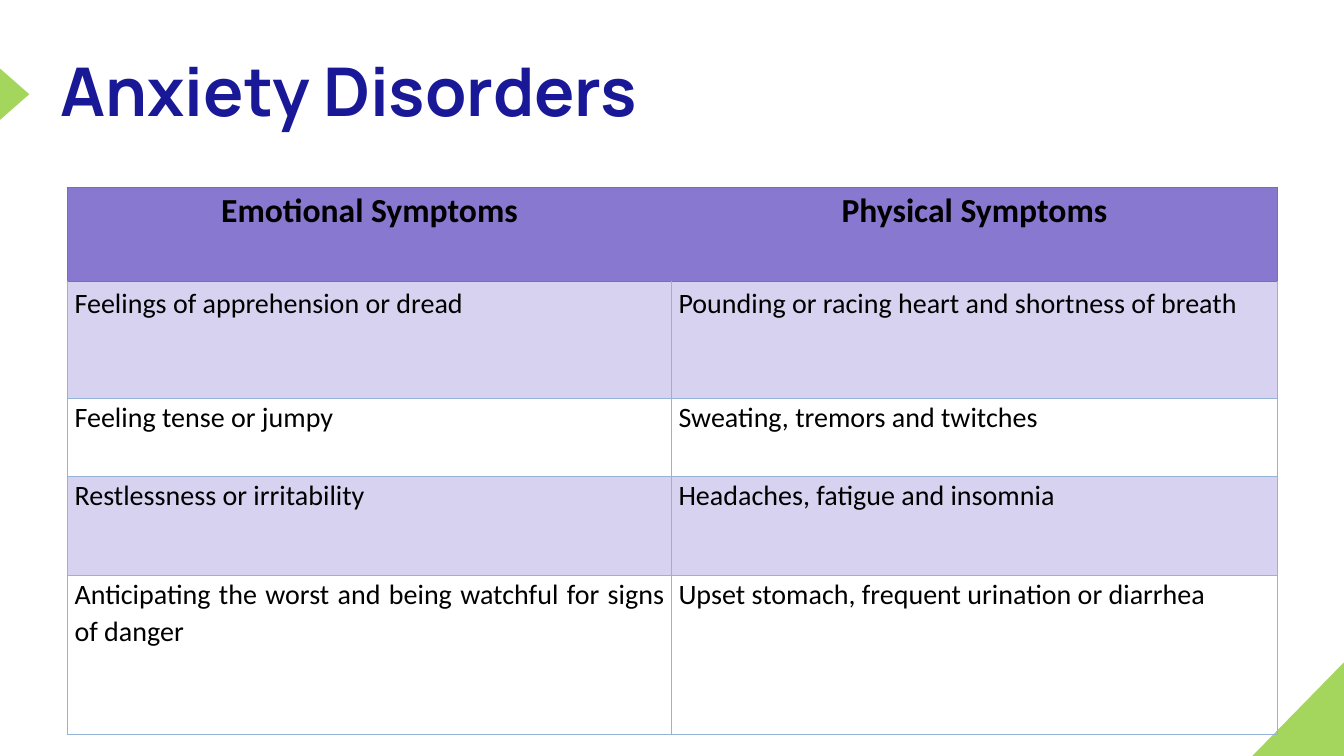
from dataclasses import dataclass
from pptx import Presentation
from pptx.dml.color import RGBColor as Rgb
from pptx.enum.shapes import MSO_SHAPE as Kind
from pptx.enum.text import MSO_ANCHOR as Anchor, PP_ALIGN as Align, MSO_AUTO_SIZE as Fit
from pptx.oxml import parse_xml
from pptx.oxml.ns import nsdecls
from pptx.util import Inches, Pt


@dataclass(frozen=True)
class Theme:
    green: str = "A4D65E"
    navy: str = "191998"
    black: str = "000000"
    head: str = "8878CF"
    band: str = "D7D2EF"
    edge: str = "95B3D7"
    rule: str = "4F81BD"
    title: int = 48
    label: int = 24
    body: int = 20


@dataclass(frozen=True)
class Mark:
    kind: Kind
    left: float
    top: float
    width: float
    height: float
    turn: int


@dataclass(frozen=True)
class Row:
    height: float
    texts: tuple[str, str]
    align: Align = Align.JUSTIFY
    space: float = 1.07


LOOK = Theme()
MARKS = (
    Mark(Kind.RIGHT_TRIANGLE, 12.41, 6.57, 0.94, 0.92, 270),
    Mark(Kind.ISOSCELES_TRIANGLE, -0.11, 0.79, 0.51, 0.29, 90),
)
WIDTHS = (5.99, 6.01)
ROWS = (
    Row(0.93, ("Emotional Symptoms", "Physical Symptoms"), Align.CENTER),
    Row(1.16, ("Feelings of apprehension or dread",
               "Pounding or racing heart and shortness of breath"), Align.LEFT, 1.15),
    Row(0.78, ("Feeling tense or jumpy", "Sweating, tremors and twitches")),
    Row(0.98, ("Restlessness or irritability", "Headaches, fatigue and insomnia")),
    Row(1.58, ("Anticipating the worst and being watchful for signs of danger",
               "Upset stomach, frequent urination or diarrhea")),
)


def apply(item, values: dict) -> None:
    for name, value in values.items():
        setattr(item, name, value)


def style(para, face: str, size: int, color: str, bold: bool) -> None:
    for run in para.runs:
        apply(run.font, {"name": face, "size": Pt(size), "bold": bold})
        run.font.color.rgb = Rgb.from_string(color)


def draw_mark(slide, mark: Mark) -> None:
    box = map(Inches, (mark.left, mark.top, mark.width, mark.height))
    shape = slide.shapes.add_shape(mark.kind, *box)
    shape.rotation = mark.turn
    shape.shadow.inherit = False
    shape.fill.solid()
    shape.fill.fore_color.rgb = Rgb.from_string(LOOK.green)
    shape.line.fill.background()


def draw_title(slide, text: str) -> None:
    title = slide.shapes.title
    apply(title, {"left": Inches(0.5), "top": Inches(0.43),
                  "width": Inches(11.5), "height": Inches(1.02)})
    frame = title.text_frame
    frame.text = text
    apply(frame, {"vertical_anchor": Anchor.MIDDLE, "auto_size": Fit.NONE, "word_wrap": True})
    para = frame.paragraphs[0]
    apply(para, {"alignment": Align.LEFT, "line_spacing": 0.9})
    style(para, "Manrope", LOOK.title, LOOK.navy, True)


def set_edges(cell, edges: dict[str, str | None]) -> None:
    props = cell._tc.get_or_add_tcPr()
    for spot, (side, color) in enumerate(edges.items()):
        paint = f'<a:solidFill><a:srgbClr val="{color}"/></a:solidFill>' if color else "<a:noFill/>"
        props.insert(spot, parse_xml(f'<a:ln{side} {nsdecls("a")} w="{Pt(1)}">{paint}</a:ln{side}>'))


def draw_cell(cell, row: Row, r: int, c: int) -> None:
    head = r == 0
    cell.text = row.texts[c]
    apply(cell, {"margin_left": Inches(0.07), "margin_right": Inches(0.07),
                 "margin_top": 0, "margin_bottom": 0, "vertical_anchor": Anchor.TOP})
    para = cell.text_frame.paragraphs[0]
    apply(para, {"alignment": row.align, "line_spacing": row.space})
    style(para, "Calibri", LOOK.label if head else LOOK.body, LOOK.black, head)
    if head or r % 2:
        cell.fill.solid()
        cell.fill.fore_color.rgb = Rgb.from_string(LOOK.head if head else LOOK.band)
    else:
        cell.fill.background()
    side = LOOK.rule if head else LOOK.edge
    set_edges(cell, {
        "L": None if head and c == 1 else side,
        "R": None if head and c == 0 else side,
        "T": LOOK.rule if r < 2 else LOOK.edge,
        "B": side,
    })


def draw_table(slide) -> None:
    high = sum(row.height for row in ROWS)
    box = map(Inches, (0.67, 1.86, sum(WIDTHS), high))
    table = slide.shapes.add_table(len(ROWS), len(WIDTHS), *box).table
    apply(table, {"first_row": False, "horz_banding": False})
    for col, width in zip(table.columns, WIDTHS):
        col.width = Inches(width)
    for r, row in enumerate(ROWS):
        table.rows[r].height = Inches(row.height)
        for c in range(len(WIDTHS)):
            draw_cell(table.cell(r, c), row, r, c)


def main() -> None:
    deck = Presentation()
    apply(deck, {"slide_width": Inches(13.33), "slide_height": Inches(7.5)})
    slide = deck.slides.add_slide(deck.slide_layouts[5])
    for mark in MARKS:
        draw_mark(slide, mark)
    draw_title(slide, "Anxiety Disorders")
    draw_table(slide)
    deck.save("out.pptx")


if __name__ == "__main__":
    main()
